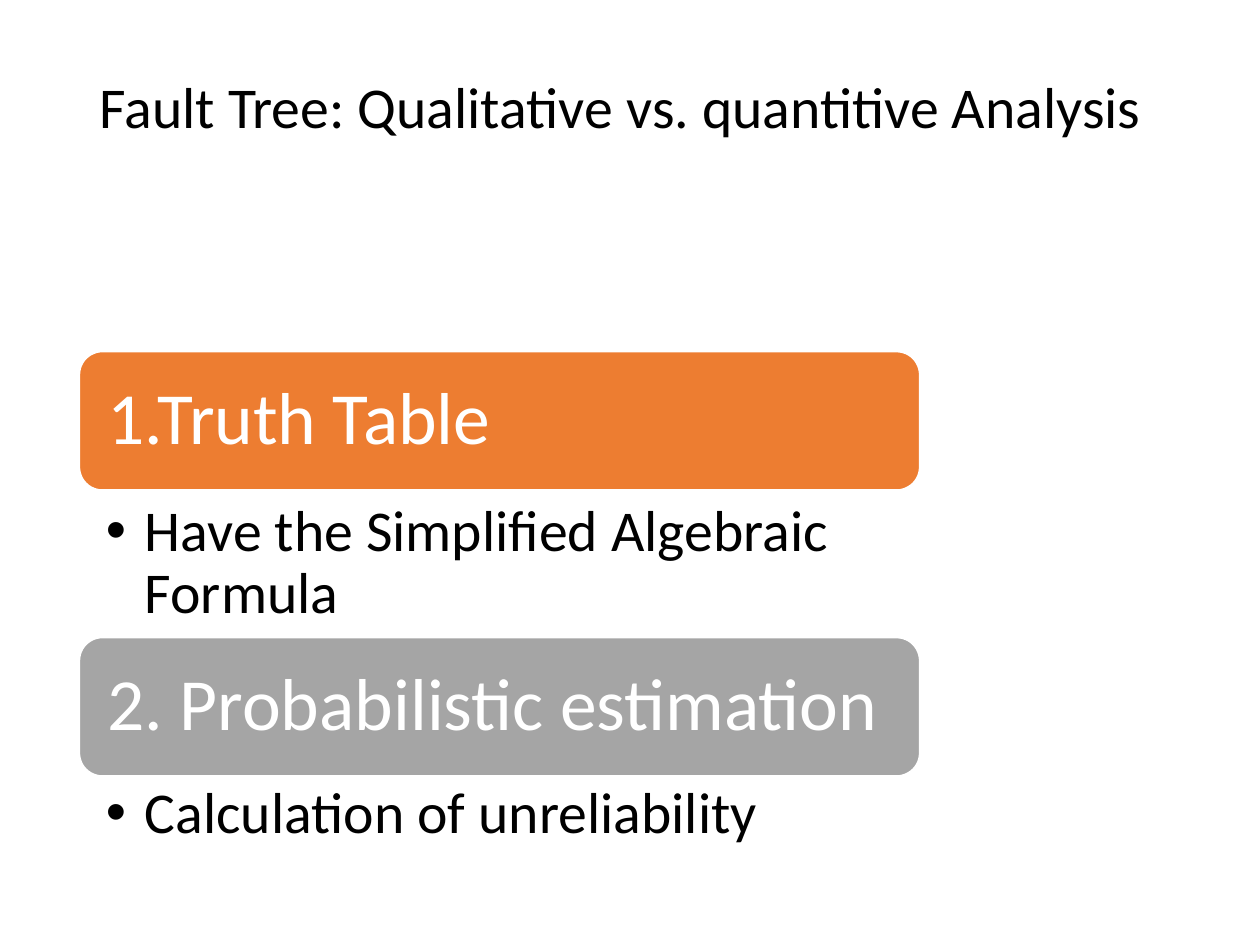
from lxml import etree
from pptx import Presentation
from pptx.dml.color import RGBColor
from pptx.enum.shapes import MSO_SHAPE
from pptx.enum.text import MSO_ANCHOR, MSO_AUTO_SIZE, PP_ALIGN
from pptx.oxml.ns import qn
from pptx.util import Inches, Pt

ROUNDED = MSO_SHAPE.ROUNDED_RECTANGLE
TOP, MIDDLE = MSO_ANCHOR.TOP, MSO_ANCHOR.MIDDLE
LEFT = PP_ALIGN.LEFT
NO_AUTOFIT = MSO_AUTO_SIZE.NONE

# Content
TITLE = "Fault Tree: Qualitative vs. quantitive Analysis"
STEPS = [  # heading, heading colour, bullet, bullet height, gap above bullet
    ("1.Truth Table", "orange", "Have the Simplified Algebraic Formula", 1.14, 0.03),
    ("2. Probabilistic estimation", "grey", "Calculation of unreliability", 0.76, 0),
]
COLORS = {"orange": "ED7D31", "grey": "A5A5A5", "white": "FFFFFF", "black": "000000"}
FONT = "Calibri"

# Layout in inches
STEP_LEFT, STEP_TOP, STEP_WIDTH = 0.63, 2.79, 6.67
HEADING_HEIGHT = 1.1
BULLET_INDENT = 0.31


def color(name):
    return RGBColor.from_string(COLORS[name])


def place(shape, left, top, width, height):
    shape.left, shape.top = Inches(left), Inches(top)
    shape.width, shape.height = Inches(width), Inches(height)


def write(shape, text, *, size, ink="black", anchor=TOP, insets, bullet=False):
    """Fill a shape with one paragraph; insets are left, top, right, bottom."""
    frame = shape.text_frame
    frame.auto_size = NO_AUTOFIT
    frame.word_wrap = True
    frame.vertical_anchor = anchor
    (frame.margin_left, frame.margin_top,
     frame.margin_right, frame.margin_bottom) = map(Inches, insets)
    paragraph = frame.paragraphs[0]
    paragraph.alignment = LEFT
    paragraph.line_spacing = 0.9
    paragraph.space_before = Pt(0)
    run = paragraph.add_run()
    run.text = text
    run.font.name, run.font.size = FONT, Pt(size)
    run.font.color.rgb = color(ink)
    if bullet:
        props = paragraph._p.get_or_add_pPr()
        props.set("marL", str(Inches(BULLET_INDENT)))
        props.set("indent", str(-Inches(BULLET_INDENT)))
        etree.SubElement(props, qn("a:buChar")).set("char", "•")


def main():
    prs = Presentation()
    prs.slide_width, prs.slide_height = Inches(10), Inches(7.5)
    two_content = prs.slide_layouts[3]
    slide = prs.slides.add_slide(two_content)

    # Title, set in the upper half of its box
    title = slide.shapes.title
    place(title, 0.69, 0.4, 8.62, 1.45)
    write(title, TITLE, size=33, insets=(0.1, 0.22, 0.1, 0.05))

    # Steps: a coloured heading with a bullet below it
    top = STEP_TOP
    bodies = (slide.placeholders[1], slide.placeholders[2])
    for body, (heading, fill, bullet, height, gap) in zip(bodies, STEPS):
        bar = slide.shapes.add_shape(
            ROUNDED, Inches(STEP_LEFT), Inches(top),
            Inches(STEP_WIDTH), Inches(HEADING_HEIGHT))
        bar.shadow.inherit = False
        bar.fill.solid()
        bar.fill.fore_color.rgb = color(fill)
        bar.line.color.rgb = color("white")
        bar.line.width = Pt(1)
        write(bar, heading, size=42, ink="white", anchor=MIDDLE, insets=(0.17,) * 4)

        top += HEADING_HEIGHT + gap
        place(body, STEP_LEFT, top, STEP_WIDTH, height)
        write(body, bullet, size=33, insets=(0.21, 0.06, 0.33, 0.06), bullet=True)
        top += height

    prs.save("out.pptx")


if __name__ == "__main__":
    main()
